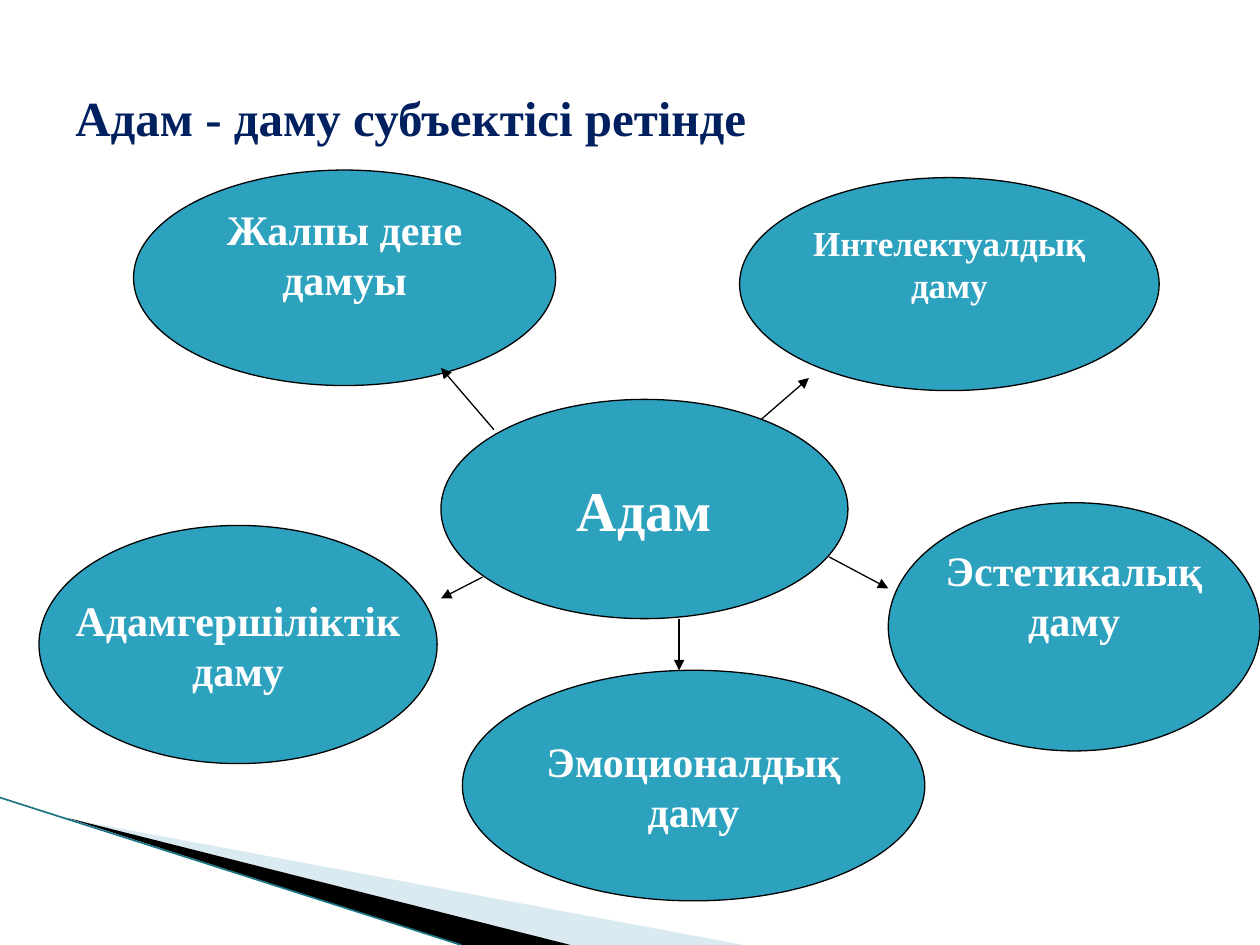
import pptx
import pptx.util
import pptx.dml.color
import pptx.enum.shapes
import pptx.enum.text
import pptx.oxml.ns
from lxml import etree

Inches = pptx.util.Inches
Pt = pptx.util.Pt
RGB = pptx.dml.color.RGBColor
ALIGN = pptx.enum.text.PP_ALIGN
MIDDLE = pptx.enum.text.MSO_ANCHOR.MIDDLE
qn = pptx.oxml.ns.qn

FONT = "Times New Roman"
TEAL = RGB(0x2D, 0xA2, 0xBF)
DEEP = RGB(0x1B, 0x75, 0x87)
PALE = RGB(0xA0, 0xCB, 0xDC)
NAVY = RGB(0x00, 0x20, 0x60)
BLACK = RGB(0, 0, 0)
WHITE = RGB(255, 255, 255)

# Place (left, top, width, height), lines, text size, extra bottom inset
OVALS = [
    ((3.5, 3.17, 3.23, 1.74), ["Адам"], 32, 0),
    ((5.87, 1.41, 3.33, 1.69), ["Интелектуалдық", "даму"], 20, 0.32),
    ((7.05, 3.99, 2.95, 1.97), ["Эстетикалық", "даму"], 24, 0.51),
    ((1.06, 1.35, 3.35, 1.71), ["Жалпы дене", "дамуы"], 24, 0.38),
    ((3.67, 5.32, 3.67, 1.83), ["Эмоционалдық", "даму"], 24, 0),
    ((0.31, 4.17, 3.16, 1.89), ["Адамгершіліктік", "даму"], 24, 0),
]

# Start and end of each arrow
ARROWS = [
    ((6.04, 3.33), (6.42, 3)),
    ((6.58, 4.42), (7.05, 4.67)),
    ((5.39, 4.91), (5.39, 5.32)),
    ((3.83, 4.58), (3.5, 4.75)),
    ((3.92, 3.41), (3.5, 2.92)),
]


def style(para, size, color):
    para.font.name = FONT
    para.font.size = Pt(size)
    para.font.bold = True
    para.font.color.rgb = color


def add_wedge(slide, points, color, alpha=100):
    spots = [(Inches(x), Inches(y)) for x, y in points]
    pen = slide.shapes.build_freeform(*spots[0], scale=1.0)
    pen.add_line_segments(spots[1:], close=True)
    wedge = pen.convert_to_shape()
    wedge.shadow.inherit = False
    wedge.fill.solid()
    wedge.fill.fore_color.rgb = color
    wedge.line.fill.background()
    if alpha < 100:
        tone = wedge.fill._xPr.find(".//" + qn("a:srgbClr"))
        etree.SubElement(tone, qn("a:alpha"), val=str(alpha * 1000))


def add_line(slide, start, end, color, width, arrow=False):
    kind = pptx.enum.shapes.MSO_CONNECTOR.STRAIGHT
    line = slide.shapes.add_connector(kind, *map(Inches, start + end))
    line.line.color.rgb = color
    line.line.width = Pt(width)
    if arrow:
        etree.SubElement(line.line._get_or_add_ln(), qn("a:tailEnd"),
                         type="triangle")
    etree.SubElement(line._element.spPr, qn("a:effectLst"))


def add_title(slide, text):
    box = slide.shapes.add_textbox(*map(Inches, (0.5, 0.3, 5.54, 1.25)))
    frame = box.text_frame
    frame.word_wrap = True
    frame.margin_right = 0
    frame.vertical_anchor = MIDDLE
    frame.text = text
    style(frame.paragraphs[0], 28, NAVY)


def add_oval(slide, place, lines, size, lift):
    kind = pptx.enum.shapes.MSO_SHAPE.OVAL
    oval = slide.shapes.add_shape(kind, *map(Inches, place))
    oval.shadow.inherit = False
    oval.fill.solid()
    oval.fill.fore_color.rgb = TEAL
    oval.line.color.rgb = BLACK
    oval.line.width = Pt(0.75)
    frame = oval.text_frame
    frame.word_wrap = False
    frame.vertical_anchor = MIDDLE
    frame.margin_bottom = Inches(0.05 + lift)
    frame.text = "\n".join(lines)
    for para in frame.paragraphs:
        para.alignment = ALIGN.CENTER
        style(para, size, WHITE)


def main():
    deck = pptx.Presentation()
    deck.slide_width = Inches(10)
    deck.slide_height = Inches(7.5)
    slide = deck.slides.add_slide(deck.slide_layouts[6])

    # Corner decoration
    add_wedge(slide, [(0.55, 6.5), (5.9, 7.5), (4.52, 7.5)], PALE, 40)
    add_wedge(slide, [(0.53, 6.49), (4.53, 7.5), (3.66, 7.5)], BLACK)
    add_line(slide, (0, 6.33), (3.66, 7.5), DEEP, 0.95)

    # Title and diagram
    add_title(slide, "Адам - даму субъектісі ретінде")
    for oval in OVALS:
        add_oval(slide, *oval)
    for start, end in ARROWS:
        add_line(slide, start, end, BLACK, 0.75, arrow=True)

    deck.save("out.pptx")


if __name__ == "__main__":
    main()
